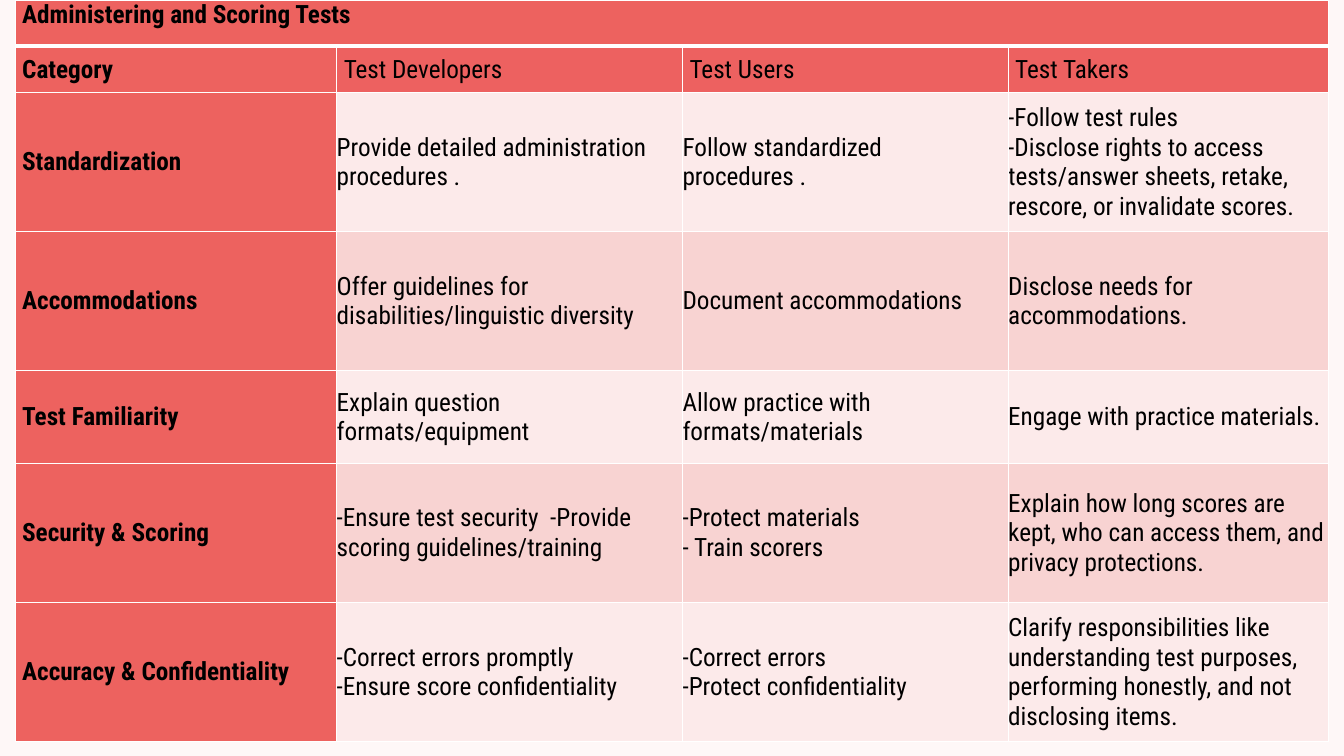
from dataclasses import dataclass

from lxml.etree import SubElement
from pptx import Presentation
from pptx.dml.color import RGBColor
from pptx.enum.text import MSO_ANCHOR
from pptx.oxml.ns import qn
from pptx.util import Inches, Pt


@dataclass(frozen=True)
class Theme:
    font: str = "Roboto Condensed"
    size: int = 18
    text: str = "000000"
    background: str = "FEF7F7"
    accent: str = "ED625F"
    header: str = "ED6160"
    bands: tuple = ("FCEAEA", "F8D3D2")
    border: str = "FFFFFF"
    thin: int = 1
    thick: int = 3


theme = Theme()

TITLE = "Administering and Scoring Tests"
HEADERS = ["Category", "Test Developers", "Test Users", "Test Takers"]
DUTIES = [
    ["Standardization",
     "Provide detailed administration procedures .",
     "Follow standardized procedures .",
     "-Follow test rules\n-Disclose rights to access tests/answer sheets, "
     "retake, rescore, or invalidate scores."],
    ["Accommodations",
     "Offer guidelines for disabilities/linguistic diversity",
     "Document accommodations",
     "Disclose needs for accommodations."],
    ["Test Familiarity",
     "Explain question formats/equipment",
     "Allow practice with formats/materials",
     "Engage with practice materials."],
    ["Security & Scoring",
     "-Ensure test security  -Provide scoring guidelines/training",
     "-Protect materials\n- Train scorers",
     "Explain how long scores are kept, who can access them, "
     "and privacy protections."],
    ["Accuracy & Confidentiality",
     "-Correct errors promptly\n-Ensure score confidentiality",
     "-Correct errors\n-Protect confidentiality",
     "Clarify responsibilities like understanding test purposes, "
     "performing honestly, and not disclosing items."],
]
ROWS = [[TITLE, "", "", ""], HEADERS, *DUTIES]
COL_WIDTHS = [3.19, 3.43, 3.23, 3.18]
ROW_HEIGHTS = [0.46, 0.46, 1.38, 1.38, 0.92, 1.38, 1.38]


def set_borders(cell, top, bottom):
    """Draw all four cell edges; top and bottom are widths in points."""
    tc_pr = cell._tc.get_or_add_tcPr()
    edges = {"lnL": theme.thin, "lnR": theme.thin, "lnT": top, "lnB": bottom}
    for tag, width in edges.items():
        ln = SubElement(tc_pr, qn(f"a:{tag}"), w=str(Pt(width)))
        fill = SubElement(ln, qn("a:solidFill"))
        SubElement(fill, qn("a:srgbClr"), val=theme.border)


prs = Presentation()
prs.slide_width, prs.slide_height = Inches(13.33), Inches(7.5)
s = prs.slides.add_slide(prs.slide_layouts[6])
s.background.fill.solid()
s.background.fill.fore_color.rgb = RGBColor.from_string(theme.background)

table = s.shapes.add_table(
    len(ROWS), len(COL_WIDTHS), Inches(0.15), Inches(0),
    Inches(sum(COL_WIDTHS)), Inches(sum(ROW_HEIGHTS))).table
for column, width in zip(table.columns, COL_WIDTHS):
    column.width = Inches(width)
for row, height in zip(table.rows, ROW_HEIGHTS):
    row.height = Inches(height)
table.cell(0, 0).merge(table.cell(0, len(COL_WIDTHS) - 1))

for i, texts in enumerate(ROWS):
    for j, text in enumerate(texts):
        cell = table.cell(i, j)
        is_label = i == 0 or j == 0
        is_duty = i > 1 and j > 0

        cell.margin_left = cell.margin_right = Inches(0 if is_duty else 0.07)
        cell.margin_top = cell.margin_bottom = 0
        cell.vertical_anchor = MSO_ANCHOR.TOP if i == 0 else MSO_ANCHOR.MIDDLE

        set_borders(cell,
                    top=theme.thick if i == 1 else theme.thin,
                    bottom=theme.thick if i == 0 else theme.thin)
        if is_label:
            color = theme.accent
        elif is_duty:
            color = theme.bands[i % 2]
        else:
            color = theme.header
        cell.fill.solid()
        cell.fill.fore_color.rgb = RGBColor.from_string(color)

        cell.text_frame.text = text
        for p in cell.text_frame.paragraphs:
            for r in p.runs:
                r.font.name = theme.font
                r.font.size = Pt(theme.size)
                r.font.bold = is_label
                r.font.color.rgb = RGBColor.from_string(theme.text)

prs.save("out.pptx")
